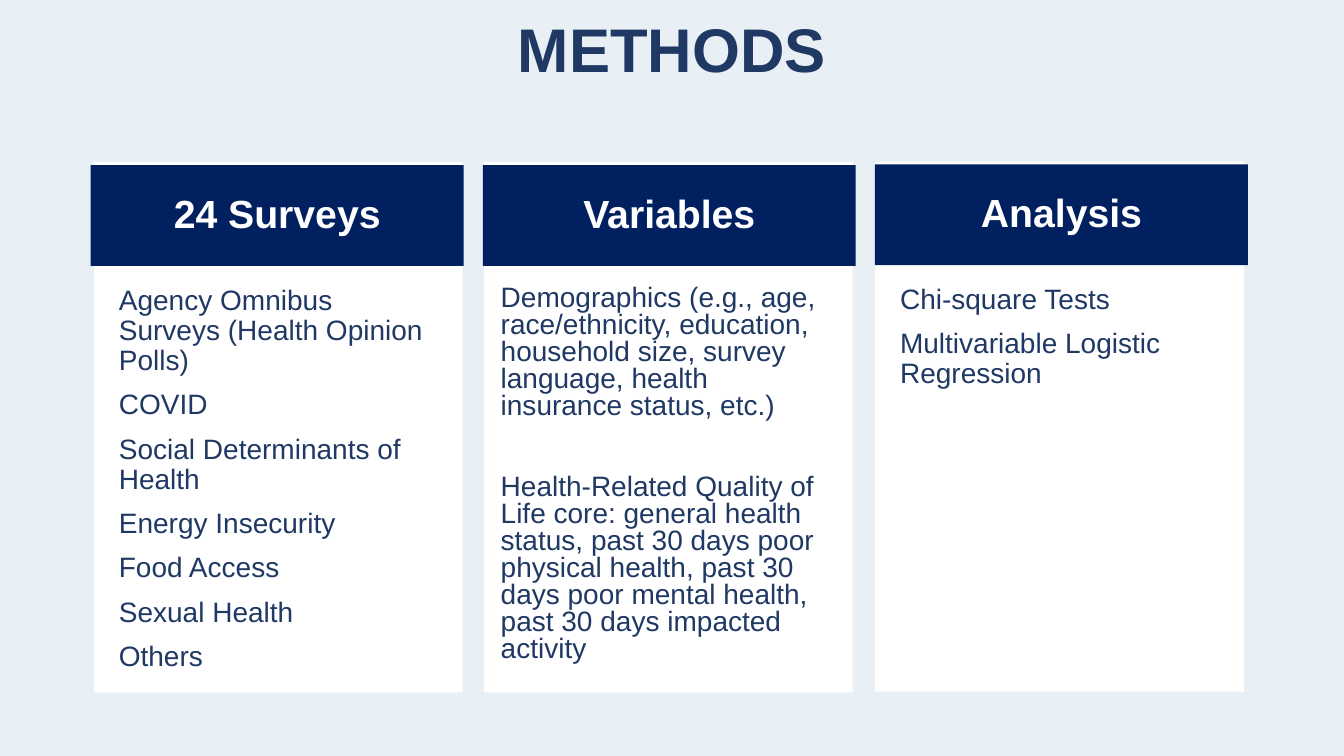
from pptx import Presentation
from pptx.dml.color import RGBColor
from pptx.enum import shapes, text
from pptx.util import Pt

FONT = "Arial"
NAVY, INK, WHITE, PALE = "002060", "1F3864", "FFFFFF", "E9F0F5"

# heading, card left, head left, text left, text width, top shift,
# line spacing, gap between paragraphs, paragraphs
COLS = [
    ("24 Surveys", 67, 64.8, 77.8, 241.2, 0.5, 0.9, 10, [
        "Agency Omnibus Surveys (Health Opinion Polls)",
        "COVID",
        "Social Determinants of Health",
        "Energy Insecurity",
        "Food Access",
        "Sexual Health",
        "Others",
    ]),
    ("Variables", 345.6, 344.9, 350.6, 247, 0.5, 0.8, 39, [
        "Demographics (e.g., age, race/ethnicity, education, household size, "
        "survey language, health insurance status, etc.)",
        "Health-Related Quality of Life core: general health status, "
        "past 30 days poor physical health, past 30 days poor mental health, "
        "past 30 days impacted activity",
    ]),
    ("Analysis", 625, 625, 635.8, 241.2, 0, 0.9, 10, [
        "Chi-square Tests",
        "Multivariable Logistic Regression",
    ]),
]


def color(code):
    return RGBColor.from_string(code)


def add_rect(slide, box, fill):
    rect = slide.shapes.add_shape(
        shapes.MSO_SHAPE.RECTANGLE, *[Pt(n) for n in box])
    rect.shadow.inherit = False
    rect.fill.solid()
    rect.fill.fore_color.rgb = color(fill)
    rect.line.fill.background()
    return rect


def add_box(slide, box):
    return slide.shapes.add_textbox(*[Pt(n) for n in box])


def write(shape, lines, size, ink, bold=False, space=0.9, gap=10):
    """Fill a shape with paragraphs; bold text is a centred heading."""
    frame = shape.text_frame
    frame.word_wrap = True
    anchor = text.MSO_ANCHOR
    frame.vertical_anchor = anchor.MIDDLE if bold else anchor.TOP
    for i, line in enumerate(lines):
        para = frame.add_paragraph() if i else frame.paragraphs[0]
        para.alignment = text.PP_ALIGN.CENTER if bold else text.PP_ALIGN.LEFT
        para.line_spacing = space
        para.space_before = Pt(gap if i else 10)
        run = para.add_run()
        run.text = line
        run.font.name = FONT
        run.font.size = Pt(size)
        run.font.bold = bold
        run.font.color.rgb = color(ink)


def add_column(slide, col):
    name, card, head, left, width, shift, space, gap, lines = col
    add_rect(slide, (card, 115.4 + shift, 263.5, 378.7), WHITE)
    bar = add_rect(slide, (head, 117.4 + shift, 266.4, 72), NAVY)
    write(bar, [name], 28, WHITE, bold=True)
    body = add_box(slide, (left, 200.2 + shift, width, 282.2))
    write(body, lines, 20, INK, space=space, gap=gap)


def main():
    deck = Presentation()
    deck.slide_width, deck.slide_height = Pt(960), Pt(540)
    slide = deck.slides.add_slide(deck.slide_layouts[6])
    back = slide.background.fill
    back.solid()
    back.fore_color.rgb = color(PALE)
    title = add_box(slide, (0, 1.4, 960, 72))
    write(title, ["METHODS"], 44, INK, bold=True)
    for col in COLS:
        add_column(slide, col)
    deck.save("out.pptx")


if __name__ == "__main__":
    main()
